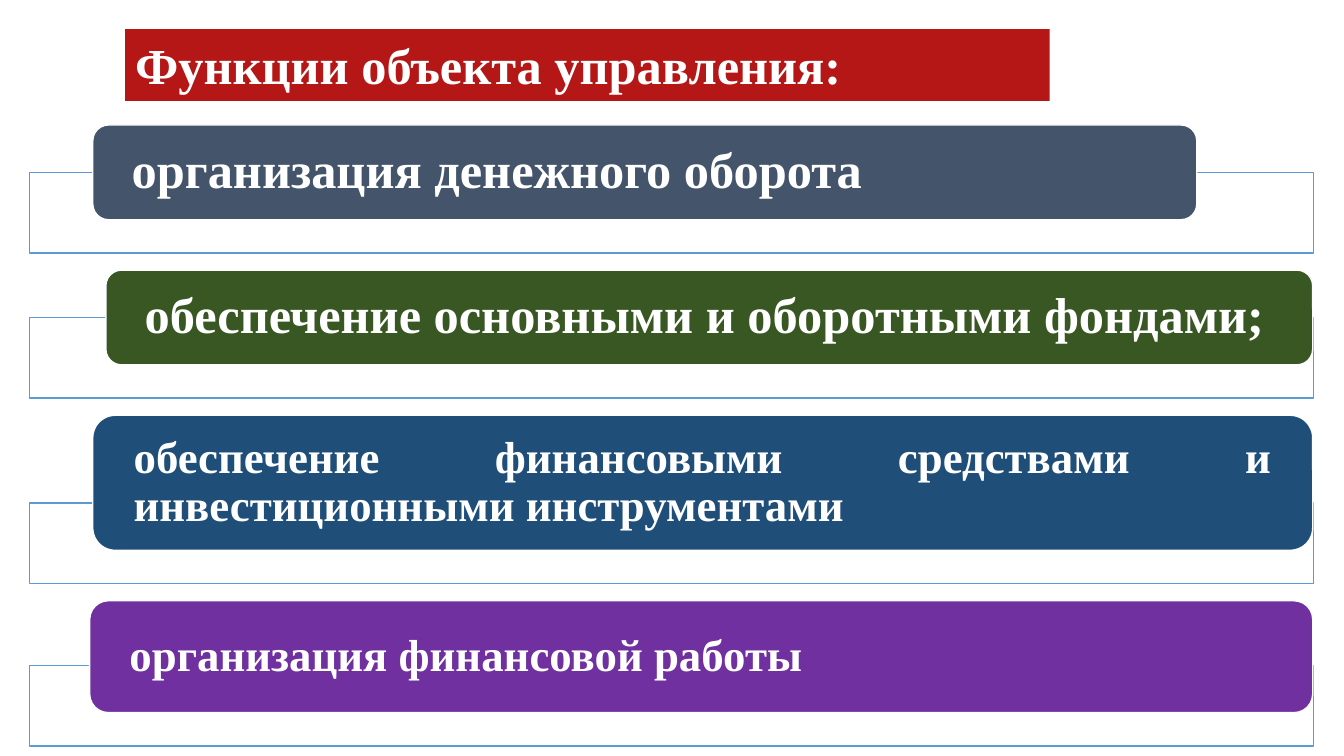
from lxml.etree import SubElement
from pptx import Presentation
from pptx.dml.color import RGBColor
from pptx.enum.shapes import MSO_SHAPE
from pptx.enum.text import MSO_ANCHOR, MSO_AUTO_SIZE, PP_ALIGN
from pptx.oxml.ns import qn
from pptx.util import Inches, Pt

WHITE = RGBColor(0xFF, 0xFF, 0xFF)
RED = RGBColor(0xB5, 0x17, 0x17)
SLATE = RGBColor(0x44, 0x54, 0x6A)
GREEN = RGBColor(0x38, 0x57, 0x23)
NAVY = RGBColor(0x1F, 0x4E, 0x79)
PURPLE = RGBColor(0x70, 0x30, 0xA0)
FRAME_BLUE = RGBColor(0x5B, 0x9B, 0xD5)

FONT = "Times New Roman"
FIRST_TOP = 1.24
BAR_GAP = 0.5
FRAME_OVERLAP = 0.47  # how far a bar reaches down into its frame

# text, left, width, height, colour, font size, alignment
FUNCTIONS = [
    ("организация денежного оборота", 0.92, 10.95, 0.94, SLATE, 36, PP_ALIGN.LEFT),
    ("обеспечение основными и оборотными фондами;", 1.05, 11.97, 0.94, GREEN, 36,
     PP_ALIGN.LEFT),
    ("обеспечение финансовыми средствами и инвестиционными инструментами",
     0.92, 12.1, 1.34, NAVY, 32, PP_ALIGN.JUSTIFY),
    ("организация финансовой работы", 0.89, 12.13, 1.11, PURPLE, 32, PP_ALIGN.LEFT),
]


def write(shape, text, size, align, anchor):
    frame = shape.text_frame
    frame.text = text
    frame.word_wrap = True
    frame.auto_size = MSO_AUTO_SIZE.NONE
    frame.vertical_anchor = anchor
    paragraph = frame.paragraphs[0]
    paragraph.alignment = align
    font = paragraph.font
    font.name, font.size, font.bold = FONT, Pt(size), True
    font.color.rgb = WHITE
    return frame, paragraph


def add_box(slide, preset, left, top, width, height, fill, line):
    box = slide.shapes.add_shape(
        preset, Inches(left), Inches(top), Inches(width), Inches(height))
    box.shadow.inherit = False
    box.fill.solid()
    box.fill.fore_color.rgb = fill
    box.line.color.rgb = line
    box.line.width = Pt(1)
    return box


def add_title(slide):
    title = slide.shapes.title
    title.left, title.top = Inches(1.24), Inches(0.29)
    title.width, title.height = Inches(9.17), Inches(0.71)
    title.fill.solid()
    title.fill.fore_color.rgb = RED
    write(title, "Функции объекта управления:", 36, PP_ALIGN.LEFT, MSO_ANCHOR.TOP)


def add_frame(slide, top):
    frame = add_box(slide, MSO_SHAPE.RECTANGLE, 0.29, top, 12.74, 0.8, WHITE, FRAME_BLUE)
    colour = frame.fill._xPr.find(qn("a:solidFill"))[0]
    SubElement(colour, qn("a:alpha"), val="90000")


def add_bar(slide, text, left, top, width, height, fill, size, align):
    bar = add_box(slide, MSO_SHAPE.ROUNDED_RECTANGLE, left, top, width, height, fill, WHITE)
    frame, paragraph = write(bar, text, size, align, MSO_ANCHOR.MIDDLE)
    frame.margin_left = frame.margin_right = Inches(0.34)
    frame.margin_top = frame.margin_bottom = 0
    paragraph.line_spacing = 0.9


def main():
    presentation = Presentation()
    presentation.slide_width = Inches(13.33)
    presentation.slide_height = Inches(7.5)
    slide = presentation.slides.add_slide(presentation.slide_layouts[5])

    add_title(slide)

    # Stack of functions, each bar lying over its frame
    top = FIRST_TOP
    for text, left, width, height, fill, size, align in FUNCTIONS:
        add_frame(slide, top + height - FRAME_OVERLAP)
        add_bar(slide, text, left, top, width, height, fill, size, align)
        top += height + BAR_GAP

    presentation.save("out.pptx")


if __name__ == "__main__":
    main()
